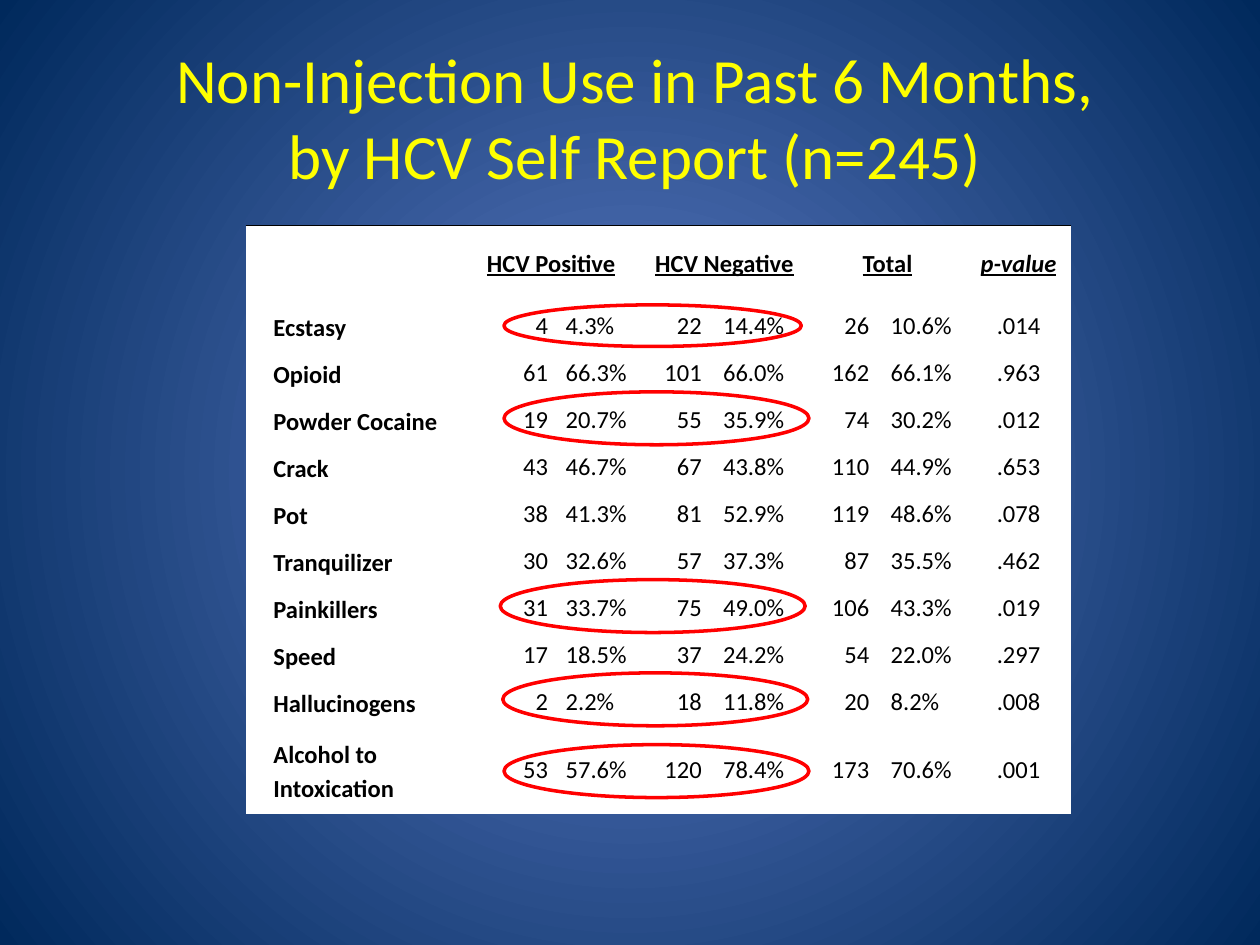
from lxml.etree import SubElement
from pptx import Presentation
from pptx.dml.color import RGBColor
from pptx.enum.shapes import MSO_SHAPE
from pptx.enum.text import MSO_ANCHOR, PP_ALIGN
from pptx.oxml import parse_xml
from pptx.oxml.ns import nsdecls, qn
from pptx.util import Inches, Pt

FONT = "Calibri"
BLACK, WHITE, RED, YELLOW = "000000", "FFFFFF", "FF0000", "FFFF00"
CENTER_BLUE, EDGE_BLUE = "5E7CC5", "00295C"
PLAIN_TABLE_STYLE = "{2D5ABB26-0587-4C30-8999-92F81FD0307C}"

COLUMN_WIDTHS = [1.72, 0.75, 0.66, 0.59, 0.75, 0.58, 0.67, 0.83]
LEFT, RIGHT, CENTER = PP_ALIGN.LEFT, PP_ALIGN.RIGHT, PP_ALIGN.CENTER
COLUMN_ALIGNS = [LEFT, RIGHT, LEFT, RIGHT, LEFT, RIGHT, LEFT, CENTER]
TIGHT_COLUMNS = {1, 2, 4, 6}
TABLE_HEIGHT, HEADER_HEIGHT, LAST_HEIGHT = 4.67, 0.61, 0.7

# Column index -> heading; the first three each span a count and a percentage
HEADINGS = {1: "HCV Positive", 3: "HCV Negative", 5: "Total", 7: "p-value"}
DRUG_USE = [
    ("Ecstasy", "4", "4.3%", "22", "14.4%", "26", "10.6%", ".014"),
    ("Opioid", "61", "66.3%", "101", "66.0%", "162", "66.1%", ".963"),
    ("Powder Cocaine", "19", "20.7%", "55", "35.9%", "74", "30.2%", ".012"),
    ("Crack", "43", "46.7%", "67", "43.8%", "110", "44.9%", ".653"),
    ("Pot", "38", "41.3%", "81", "52.9%", "119", "48.6%", ".078"),
    ("Tranquilizer", "30", "32.6%", "57", "37.3%", "87", "35.5%", ".462"),
    ("Painkillers", "31", "33.7%", "75", "49.0%", "106", "43.3%", ".019"),
    ("Speed", "17", "18.5%", "37", "24.2%", "54", "22.0%", ".297"),
    ("Hallucinogens", "2", "2.2%", "18", "11.8%", "20", "8.2%", ".008"),
    ("Alcohol to Intoxication", "53", "57.6%", "120", "78.4%", "173", "70.6%", ".001"),
]
SIGNIFICANT_RINGS = [
    (4, 2.42, 2.36, 0.33),
    (4, 3.11, 2.42, 0.42),
    (3.97, 4.6, 2.42, 0.42),
    (3.99, 5.34, 2.42, 0.42),
    (4, 5.91, 2.42, 0.42),
]


def rgb(code):
    return RGBColor.from_string(code)


def set_attributes(target, **values):
    for name, value in values.items():
        setattr(target, name, value)


def format_font(font, size, color, **styles):
    set_attributes(font, name=FONT, size=Pt(size), **styles)
    font.color.rgb = rgb(color)


def paint_background(slide):
    """Fill the background with a gradient that darkens from the centre."""
    fill = slide.background.fill
    fill.gradient()
    for stop, color in zip(fill.gradient_stops, (CENTER_BLUE, EDGE_BLUE)):
        stop.color.rgb = rgb(color)
    gradient = slide.element.find(".//" + qn("a:gradFill"))
    linear = gradient.find(qn("a:lin"))
    if linear is not None:
        gradient.remove(linear)
    circle = SubElement(gradient, qn("a:path"), {"path": "circle"})
    SubElement(circle, qn("a:fillToRect"), dict.fromkeys("ltrb", "50000"))


def write_title(slide):
    title = slide.shapes.title
    set_attributes(title, left=Inches(0.33), top=Inches(0.3),
                   width=Inches(9.42), height=Inches(1.25))
    title.text_frame.vertical_anchor = MSO_ANCHOR.MIDDLE
    heading = title.text_frame.paragraphs[0]
    heading.text = "Non-Injection Use in Past 6 Months,\vby HCV Self Report (n=245)"
    heading.alignment = CENTER
    for run in heading.runs:
        format_font(run.font, 36, YELLOW)


def draw_top_border(cell):
    cell.fill._xPr.insert(0, parse_xml(
        f'<a:lnT {nsdecls("a")} w="12700"><a:solidFill><a:srgbClr val="{BLACK}"/>'
        "</a:solidFill></a:lnT>"))


def write_cell(cell, text, column, align, **styles):
    side, edge = (0.07, 0) if column in TIGHT_COLUMNS else (0.1, 0.02)
    set_attributes(cell, vertical_anchor=MSO_ANCHOR.MIDDLE,
                   margin_left=Inches(side), margin_right=Inches(side),
                   margin_top=Inches(edge), margin_bottom=Inches(edge))
    paragraph = cell.text_frame.paragraphs[0]
    paragraph.alignment = align
    run = paragraph.add_run()
    run.text = text
    format_font(run.font, 14, BLACK, **styles)
    return paragraph


def size_table(table):
    drug_height = (TABLE_HEIGHT - HEADER_HEIGHT - LAST_HEIGHT) / (len(DRUG_USE) - 1)
    heights = [HEADER_HEIGHT] + [drug_height] * (len(DRUG_USE) - 1) + [LAST_HEIGHT]
    for row, height in zip(table.rows, heights):
        row.height = Inches(height)
    for column, width in zip(table.columns, COLUMN_WIDTHS):
        column.width = Inches(width)


def add_use_table(slide):
    frame = slide.shapes.add_table(
        len(DRUG_USE) + 1, len(COLUMN_WIDTHS), Inches(1.95), Inches(1.79),
        Inches(sum(COLUMN_WIDTHS)), Inches(TABLE_HEIGHT))
    table = frame.table
    set_attributes(table, first_row=False, horz_banding=False)
    frame.element.find(".//" + qn("a:tableStyleId")).text = PLAIN_TABLE_STYLE
    size_table(table)

    for cell in table.iter_cells():
        cell.fill.solid()
        cell.fill.fore_color.rgb = rgb(WHITE)
    for cell in table.rows[0].cells:
        draw_top_border(cell)

    for column, heading in HEADINGS.items():
        is_p_value = column == 7
        if not is_p_value:
            table.cell(0, column).merge(table.cell(0, column + 1))
        write_cell(table.cell(0, column), heading, column, CENTER,
                   bold=True, underline=True, italic=is_p_value)

    for row, values in enumerate(DRUG_USE, start=1):
        for column, (value, align) in enumerate(zip(values, COLUMN_ALIGNS)):
            is_drug_name = column == 0
            paragraph = write_cell(table.cell(row, column), value, column, align,
                                   bold=is_drug_name)
            if is_drug_name:
                paragraph.line_spacing = 1.15
                paragraph._p.get_or_add_pPr().set("marL", str(Inches(0.12)))


def add_ring(slide, *place):
    ring = slide.shapes.add_shape(MSO_SHAPE.OVAL, *map(Inches, place))
    ring.shadow.inherit = False
    ring.fill.background()
    ring.line.color.rgb = rgb(RED)
    ring.line.width = Pt(2)


def main():
    deck = Presentation()
    set_attributes(deck, slide_width=Inches(10), slide_height=Inches(7.5))
    slide = deck.slides.add_slide(deck.slide_layouts[5])
    paint_background(slide)
    write_title(slide)
    add_use_table(slide)
    for place in SIGNIFICANT_RINGS:
        add_ring(slide, *place)
    deck.save("out.pptx")


if __name__ == "__main__":
    main()
